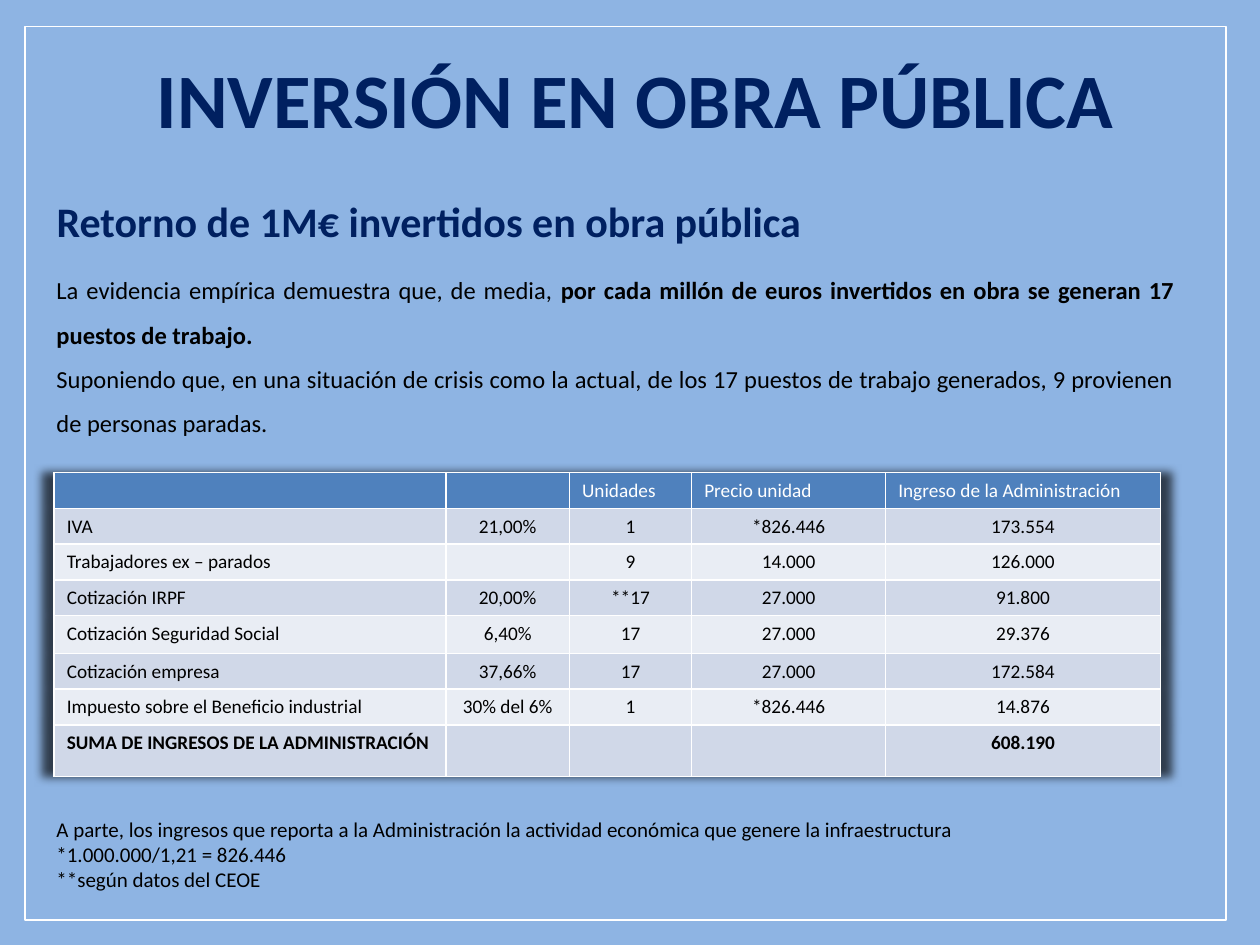
from lxml.etree import SubElement
from pptx import Presentation
from pptx.dml.color import RGBColor
from pptx.enum.shapes import MSO_SHAPE
from pptx.enum.text import MSO_ANCHOR, MSO_AUTO_SIZE, PP_ALIGN
from pptx.oxml import parse_xml
from pptx.oxml.ns import nsdecls, qn
from pptx.util import Inches, Pt

FONT = "Calibri"
SKY = RGBColor(0x8E, 0xB4, 0xE3)
NAVY = RGBColor(0x00, 0x20, 0x60)
BLACK = RGBColor(0, 0, 0)
WHITE = RGBColor(0xFF, 0xFF, 0xFF)
HEADER_BLUE = RGBColor(0x4F, 0x81, 0xBD)
BANDS = (RGBColor(0xD0, 0xD8, 0xE8), RGBColor(0xE9, 0xED, 0xF4))

COLUMN_WIDTHS = (3.11, 0.98, 0.97, 1.54, 2.18)
ROW_HEIGHTS = (0.28, 0.28, 0.28, 0.28, 0.3, 0.28, 0.28, 0.41)
RETURNS = (
    ("", "", "Unidades", "Precio unidad", "Ingreso de la Administración"),
    ("IVA", "21,00%", "1", "*826.446", "173.554"),
    ("Trabajadores ex – parados", "", "9", "14.000", "126.000"),
    ("Cotización IRPF", "20,00%", "**17", "27.000", "91.800"),
    ("Cotización Seguridad Social", "6,40%", "17", "27.000", "29.376"),
    ("Cotización empresa", "37,66%", "17", "27.000", "172.584"),
    ("Impuesto sobre el Beneficio industrial", "30% del 6%", "1", "*826.446", "14.876"),
    ("SUMA DE INGRESOS DE LA ADMINISTRACIÓN", "", "", "", "608.190"),
)
EVIDENCE = (
    (("La evidencia empírica demuestra que, de media, ", False),
     ("por cada millón de euros invertidos en obra se generan 17 puestos de trabajo.", True)),
    (("Suponiendo que, en una situación de crisis como la actual, de los 17 puestos "
      "de trabajo generados, 9 provienen de personas paradas.", False),),
)
FOOTNOTES = (
    (("A parte, los ingresos que reporta a la Administración la actividad económica "
      "que genere la infraestructura", False),),
    (("*1.000.000/1,21 = 826.446", False),),
    (("**según datos del CEOE", False),),
)


def set_attributes(target, values):
    for name, value in values.items():
        setattr(target, name, value)


def add_run(paragraph, text, size, color, bold):
    run = paragraph.add_run()
    run.text = text
    set_attributes(run.font, {"name": FONT, "size": Pt(size), "bold": bold})
    run.font.color.rgb = color


def add_text(slide, box, paragraphs, size, color, anchor=MSO_ANCHOR.TOP, **layout):
    """Add a text box; each paragraph is a sequence of (text, bold) runs."""
    frame = slide.shapes.add_textbox(*map(Inches, box)).text_frame
    set_attributes(frame, {"word_wrap": True, "vertical_anchor": anchor,
                           "auto_size": MSO_AUTO_SIZE.SHAPE_TO_FIT_TEXT})
    for index, runs in enumerate(paragraphs):
        paragraph = frame.add_paragraph() if index else frame.paragraphs[0]
        set_attributes(paragraph, layout)
        for text, bold in runs:
            add_run(paragraph, text, size, color, bold)


def add_borders(cell):
    properties = cell._tc.get_or_add_tcPr()
    for position, side in enumerate(("lnL", "lnR", "lnT", "lnB")):
        properties.insert(position, parse_xml(
            f'<a:{side} {nsdecls("a")} w="{Pt(1)}"><a:solidFill>'
            f'<a:srgbClr val="{WHITE}"/></a:solidFill></a:{side}>'))


def add_table_shadow(table):
    effects = parse_xml(
        f'<a:effectLst {nsdecls("a")}><a:outerShdw blurRad="{Pt(5)}" sx="102000" '
        'sy="100000" algn="ctr" rotWithShape="0"><a:srgbClr val="000000">'
        '<a:alpha val="65000"/></a:srgbClr></a:outerShdw></a:effectLst>')
    table._tbl.tblPr.insert(0, effects)


def fill_cell(cell, text, row, column):
    is_header = row == 0
    cell.fill.solid()
    cell.fill.fore_color.rgb = HEADER_BLUE if is_header else BANDS[(row - 1) % 2]
    add_borders(cell)
    paragraph = cell.text_frame.paragraphs[0]
    if not text:
        SubElement(paragraph._p, qn("a:endParaRPr"), sz="1100")
        return
    paragraph.alignment = PP_ALIGN.LEFT if is_header or column == 0 else PP_ALIGN.CENTER
    add_run(paragraph, text, 11, WHITE if is_header else BLACK, row == len(RETURNS) - 1)


def add_returns_table(slide):
    frame = slide.shapes.add_table(
        len(RETURNS), len(COLUMN_WIDTHS), Inches(0.43), Inches(3.75),
        Inches(sum(COLUMN_WIDTHS)), Inches(sum(ROW_HEIGHTS)))
    table = frame.table
    add_table_shadow(table)
    for column, width in zip(table.columns, COLUMN_WIDTHS):
        column.width = Inches(width)
    for row, height in zip(table.rows, ROW_HEIGHTS):
        row.height = Inches(height)
    for row, values in enumerate(RETURNS):
        for column, text in enumerate(values):
            fill_cell(table.cell(row, column), text, row, column)


def add_frame(slide):
    border = slide.shapes.add_shape(
        MSO_SHAPE.RECTANGLE, *map(Inches, (0.2, 0.21, 9.53, 7.09)))
    border.shadow.inherit = False
    border.fill.background()
    border.line.color.rgb = WHITE
    border.line.width = Pt(1)


def main():
    presentation = Presentation()
    set_attributes(presentation, {"slide_width": Inches(10), "slide_height": Inches(7.5)})
    slide = presentation.slides.add_slide(presentation.slide_layouts[6])
    slide.background.fill.solid()
    slide.background.fill.fore_color.rgb = SKY

    add_text(slide, (0.51, 0.36, 9.21, 0.84), ((("INVERSIÓN EN OBRA PÚBLICA ", True),),),
             44, NAVY, alignment=PP_ALIGN.CENTER)
    add_text(slide, (0.35, 1.15, 8.91, 0.8),
             ((("Retorno de 1M€ invertidos en obra pública", True),),),
             24, NAVY, MSO_ANCHOR.MIDDLE, line_spacing=2.0)
    add_text(slide, (0.35, 2.02, 9.07, 1.51), EVIDENCE, 14, BLACK,
             alignment=PP_ALIGN.JUSTIFY, line_spacing=1.5)
    add_returns_table(slide)
    add_text(slide, (0.35, 6.43, 9.07, 0.71), FOOTNOTES, 12, BLACK,
             alignment=PP_ALIGN.JUSTIFY)
    add_frame(slide)
    presentation.save("out.pptx")


if __name__ == "__main__":
    main()
